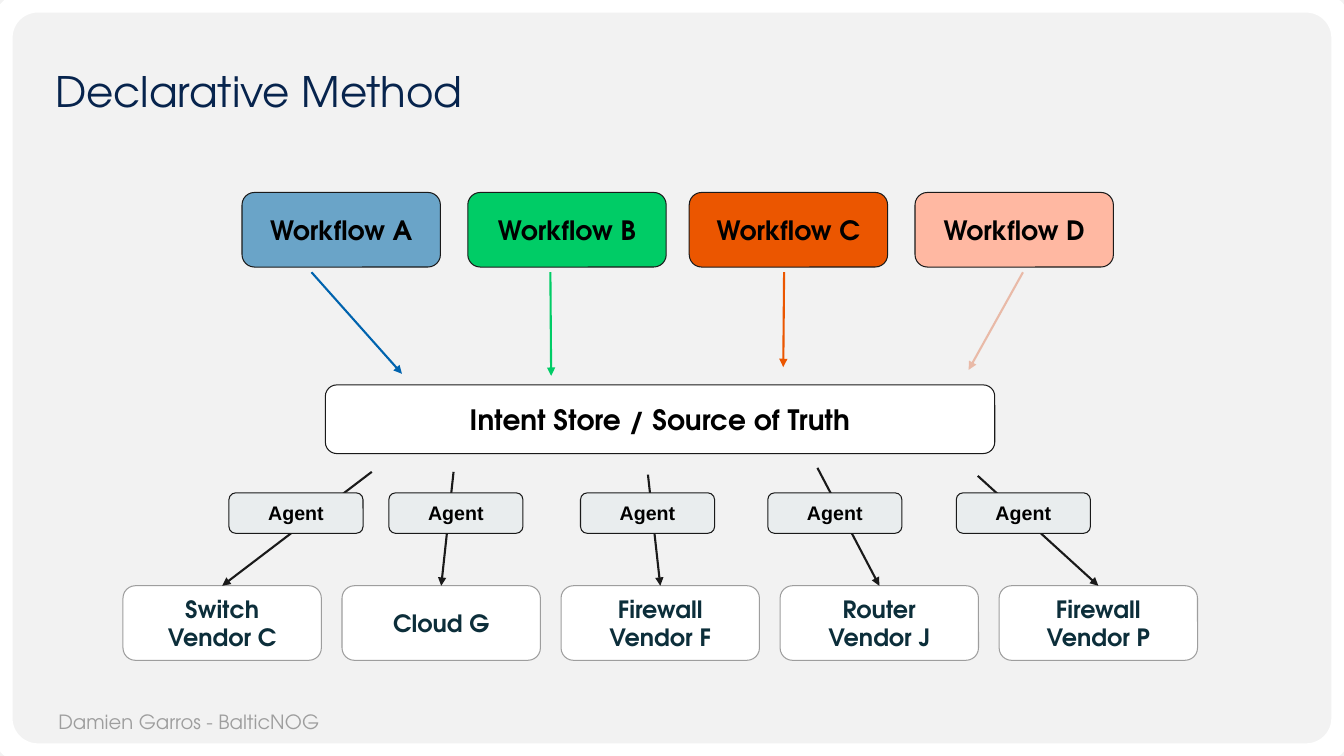
from lxml.etree import SubElement
from pptx import Presentation
from pptx.dml.color import RGBColor
from pptx.enum.shapes import MSO_CONNECTOR, MSO_SHAPE
from pptx.enum.text import MSO_ANCHOR, PP_ALIGN
from pptx.oxml.ns import qn
from pptx.util import Cm, Pt

BLACK = RGBColor(0x00, 0x00, 0x00)
WHITE = RGBColor(0xFF, 0xFF, 0xFF)
INK = RGBColor(0x1A, 0x1A, 0x1A)
GRAY = RGBColor(0x9E, 0x9E, 0x9E)
PAPER = RGBColor(0xF2, 0xF2, 0xF2)
AGENT_FILL = RGBColor(0xE9, 0xED, 0xEE)
NAVY = RGBColor(0x07, 0x24, 0x4D)
TEAL = RGBColor(0x0C, 0x2E, 0x3A)
BLUE = RGBColor(0x6A, 0xA4, 0xC8)
DEEP_BLUE = RGBColor(0x00, 0x63, 0xAE)
GREEN = RGBColor(0x00, 0xCC, 0x66)
ORANGE = RGBColor(0xEB, 0x56, 0x00)
PEACH = RGBColor(0xFF, 0xB8, 0xA2)
DUSTY_PEACH = RGBColor(0xE9, 0xBA, 0xA8)
FONT = "TeX Gyre Adventor"

TITLE = "Declarative Method"
FOOTER = "Damien Garros - BalticNOG"
STORE = "Intent Store / Source of Truth"
AGENT = "Agent"

# name, fill, left, arrow colour, arrow start x, arrow end (cm)
WORKFLOWS = [
    ("Workflow A", BLUE, 6.1, DEEP_BLUE, 7.85, (10.13, 9.42)),
    ("Workflow B", GREEN, 11.79, GREEN, 13.87, (13.89, 9.47)),
    ("Workflow C", ORANGE, 17.37, ORANGE, 19.76, (19.74, 9.25)),
    ("Workflow D", PEACH, 23.06, DUSTY_PEACH, 25.78, (24.41, 9.32)),
]
# name, left of its agent, arrow start (cm)
DEVICES = [
    ("Switch\nVendor C", 5.77, (9.37, 11.89)),
    ("Cloud G", 9.8, (11.43, 11.89)),
    ("Firewall\nVendor F", 14.63, (16.33, 11.96)),
    ("Router\nVendor J", 19.35, (20.6, 11.79)),
    ("Firewall\nVendor P", 24.1, (24.64, 11.99)),
]
BOX_SIZE = (5, 1.88)
AGENT_SIZE = (3.38, 1.02)
STORE_SIZE = (16.87, 1.73)
WORKFLOW_TOP, WORKFLOW_ARROW_TOP = 4.85, 6.86
AGENT_TOP, DEVICE_TOP = 12.42, 14.76
DEVICE_LEFT, DEVICE_STEP = 3.1, 5.52

deck = Presentation()
deck.slide_width, deck.slide_height = Cm(33.87), Cm(19.05)
page = deck.slides.add_slide(deck.slide_layouts[6])
page.background.fill.solid()
page.background.fill.fore_color.rgb = PAPER


def write(shape, text, size=19, color=BLACK, font=FONT, bold=True,
          align=PP_ALIGN.CENTER, anchor=MSO_ANCHOR.MIDDLE, spacing=None):
    frame = shape.text_frame
    frame.word_wrap = True
    frame.vertical_anchor = anchor
    frame.margin_left = frame.margin_right = Cm(0.25)
    frame.margin_top = frame.margin_bottom = Cm(0.25)
    para = frame.paragraphs[0]
    para.text = text.replace("\n", "\v")
    para.alignment = align
    para.line_spacing = spacing
    for span in para.runs:
        span.font.name, span.font.size, span.font.bold = font, Pt(size), bold
        span.font.color.rgb = color


def add_label(left, top, width, height, text, **style):
    box = page.shapes.add_textbox(Cm(left), Cm(top), Cm(width), Cm(height))
    write(box, text, bold=False, align=PP_ALIGN.LEFT, anchor=MSO_ANCHOR.TOP, **style)


def add_box(left, top, extent, text, fill=WHITE, line=INK, **style):
    box = page.shapes.add_shape(MSO_SHAPE.ROUNDED_RECTANGLE,
                                Cm(left), Cm(top), *map(Cm, extent))
    box.shadow.inherit = False
    box.fill.solid()
    box.fill.fore_color.rgb = fill
    box.line.color.rgb = line
    box.line.width = Pt(0.75)
    write(box, text, **style)
    return box


def add_arrow(start, end, color=INK):
    arrow = page.shapes.add_connector(MSO_CONNECTOR.STRAIGHT,
                                      *map(Cm, start + end))
    arrow.line.color.rgb = color
    arrow.line.width = Pt(1.5)
    outline = arrow._element.spPr.find(qn("a:ln"))
    SubElement(outline, qn("a:tailEnd"), type="triangle")
    SubElement(arrow._element.spPr, qn("a:effectLst"))
    return arrow


border = page.shapes.add_shape(MSO_SHAPE.ROUNDED_RECTANGLE, 0, 0,
                               deck.slide_width, deck.slide_height)
border.adjustments[0] = 0.05
border.shadow.inherit = False
border.fill.background()
border.line.color.rgb = WHITE
border.line.width = Pt(18)

add_label(1.22, 17.63, 16.43, 1.12, FOOTER, size=14, color=GRAY)
add_label(1.14, 1.65, 31.55, 2.11, TITLE, size=30, color=NAVY, spacing=0.8)
add_box(8.2, 9.7, STORE_SIZE, STORE, size=20)

for name, fill, left, arrow_color, arrow_left, arrow_end in WORKFLOWS:
    add_box(left, WORKFLOW_TOP, BOX_SIZE, name, fill=fill)
    add_arrow((arrow_left, WORKFLOW_ARROW_TOP), arrow_end, arrow_color)

for index, (name, agent_left, arrow_start) in enumerate(DEVICES):
    left = DEVICE_LEFT + index * DEVICE_STEP
    device = add_box(left, DEVICE_TOP, BOX_SIZE, name, line=GRAY, size=17, color=TEAL)
    arrow = add_arrow(arrow_start, (left + BOX_SIZE[0] / 2, DEVICE_TOP))
    arrow.end_connect(device, 0)
    add_box(agent_left, AGENT_TOP, AGENT_SIZE, AGENT, fill=AGENT_FILL,
            size=14, font="Arial")

deck.save("out.pptx")
